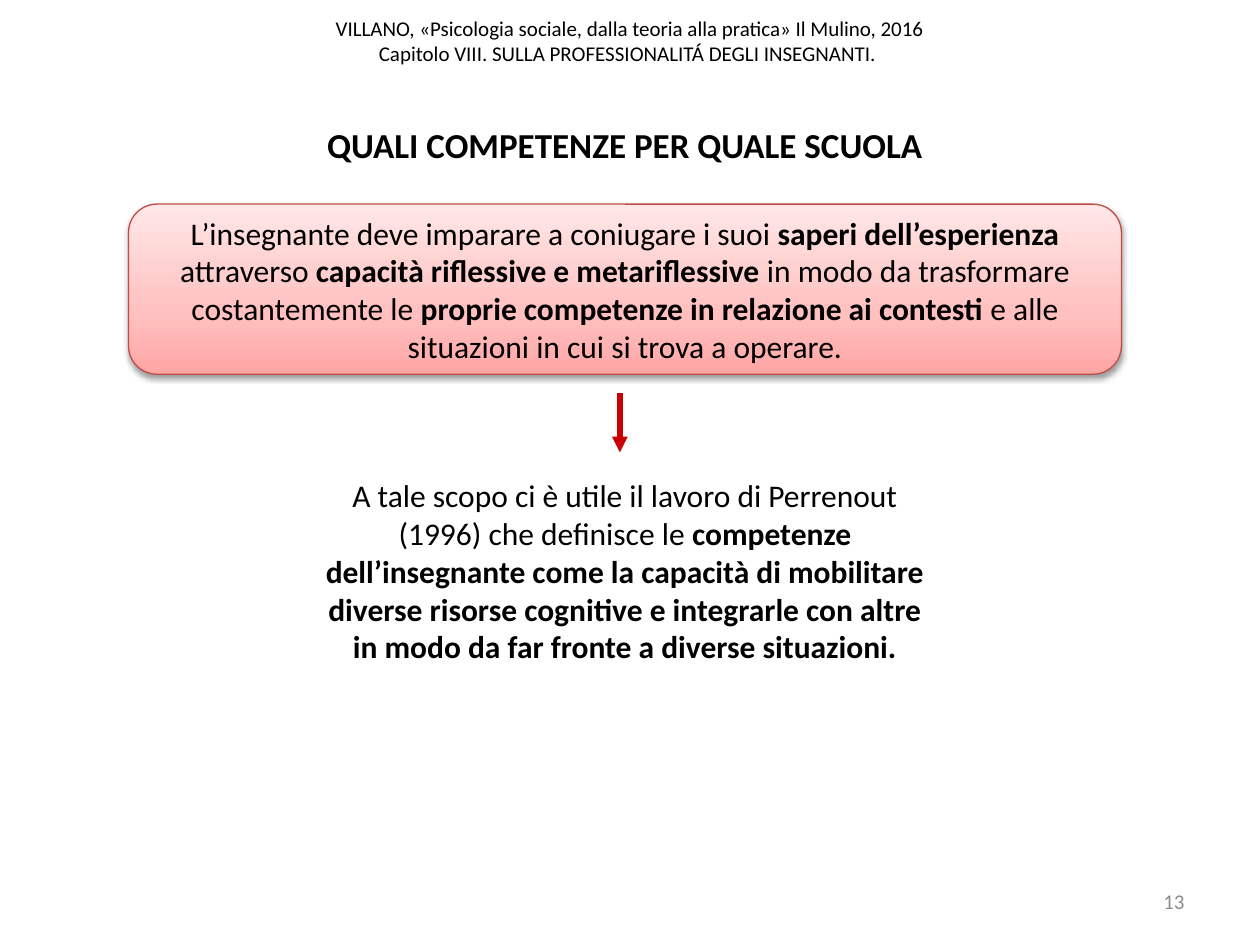
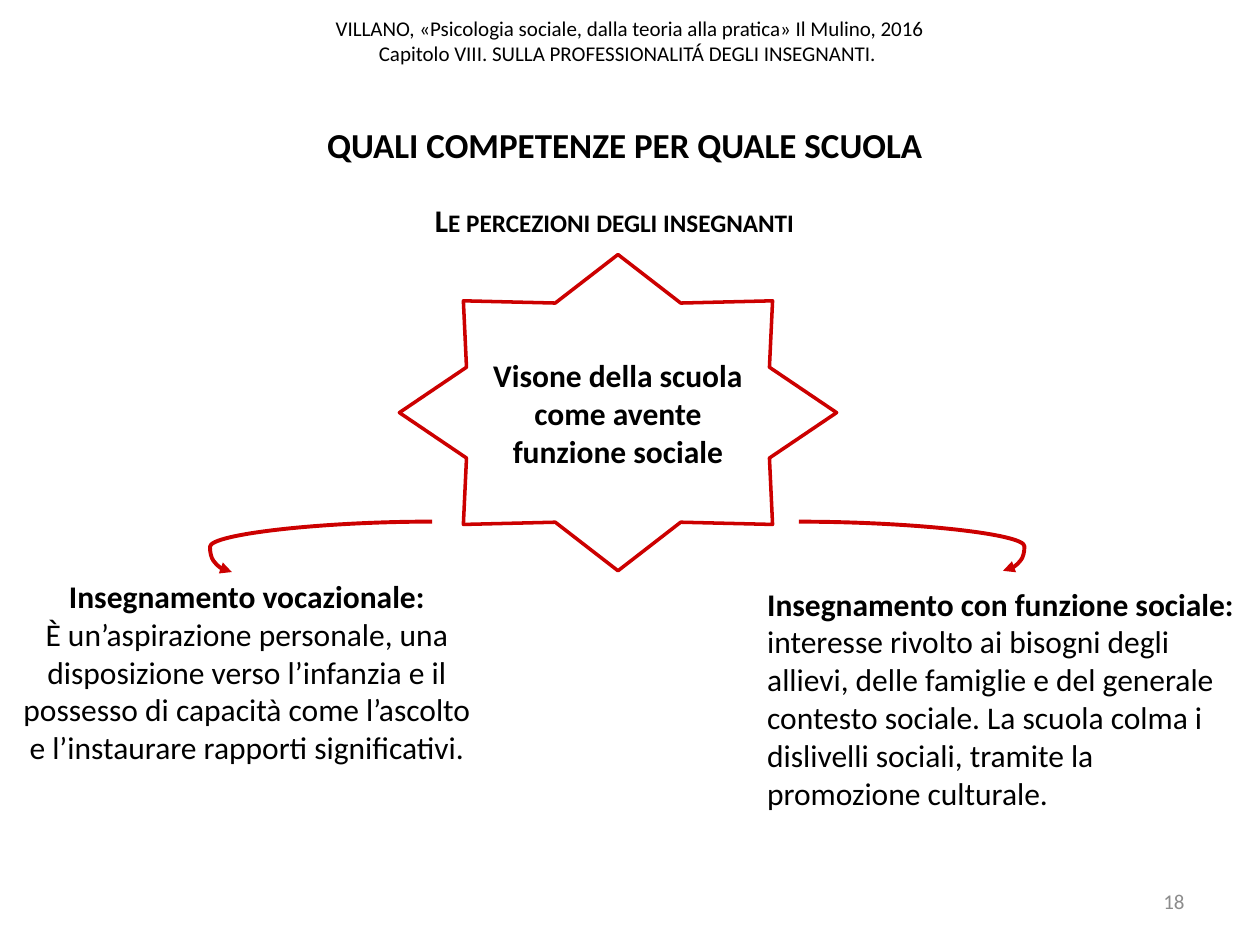
from copy import deepcopy
from lxml import etree
from pptx import Presentation
from pptx.dml.color import RGBColor
from pptx.enum.shapes import MSO_CONNECTOR, MSO_SHAPE
from pptx.enum.text import MSO_ANCHOR, MSO_AUTO_SIZE, PP_ALIGN
from pptx.oxml.ns import qn
from pptx.util import Inches, Pt

LEFT, CENTER, RIGHT = PP_ALIGN.LEFT, PP_ALIGN.CENTER, PP_ALIGN.RIGHT
TOP, MIDDLE = MSO_ANCHOR.TOP, MSO_ANCHOR.MIDDLE
LINE, CURVE = MSO_CONNECTOR.STRAIGHT, MSO_CONNECTOR.CURVE
FONT, BLACK, GREY, RED = "Calibri", "000000", "8C8C8C", "CC0000"


def write(shape, paras, size=18, align=CENTER, anchor=TOP, color=BLACK):
    """Fill a shape with paragraphs, each a list of (text, bold) runs."""
    frame = shape.text_frame
    frame.word_wrap = True
    frame.auto_size = MSO_AUTO_SIZE.NONE
    frame.vertical_anchor = anchor
    for i, runs in enumerate(paras):
        para = frame.add_paragraph() if i else frame.paragraphs[0]
        para.alignment = align
        for text, bold in runs:
            run = para.add_run()
            run.text = text
            run.font.name, run.font.size, run.font.bold = FONT, Pt(size), bold
            run.font.color.rgb = RGBColor.from_string(color)
    return shape


def arrow(slide, kind, ends, width, bend=None):
    """Draw a red arrow; bend is the curve's adjustment."""
    link = slide.shapes.add_connector(kind, *[Inches(v) for v in ends])
    link.line.color.rgb = RGBColor.from_string(RED)
    link.line.width = Pt(width)
    etree.SubElement(link.line._get_or_add_ln(), qn("a:tailEnd"), type="triangle")
    props = link.element.spPr
    etree.SubElement(props, qn("a:effectLst"))
    if bend:
        guides = props.find(qn("a:prstGeom")).get_or_add_avLst()
        etree.SubElement(guides, qn("a:gd"), name="adj1", fmla=f"val {round(bend * 100000)}")


deck = Presentation()
deck.slide_width, deck.slide_height = Inches(10), Inches(7.5)
layout = deck.slide_layouts[5]

# Title and page number
slides = []
for page in ("13", "18"):
    slide = deck.slides.add_slide(layout)
    title = slide.shapes.title
    title.left, title.top = Inches(1.69), Inches(0.93)
    title.width, title.height = Inches(6.54), Inches(0.44)
    write(title, [[("QUALI COMPETENZE PER QUALE SCUOLA", True)]], 20)
    box = slide.shapes.add_textbox(Inches(7.17), Inches(6.95), Inches(2.33), Inches(0.4))
    write(box, [[(page, False)]], 12, RIGHT, MIDDLE, GREY)
    slides.append(slide)
first, second = slides

# Running header, moved to the shared layout
head = first.shapes.add_textbox(Inches(0), Inches(-0.11), Inches(10), Inches(0.87))
write(head, [[("VILLANO, «Psicologia sociale, dalla teoria alla pratica» Il Mulino, 2016", False)],
             [("Capitolo VIII. SULLA PROFESSIONALITÁ DEGLI INSEGNANTI. ", False)]],
      12, CENTER, MIDDLE)
layout.shapes.element.append(head.element)

# Slide 1: card with gradient and soft shadow
card = first.shapes.add_shape(MSO_SHAPE.ROUNDED_RECTANGLE, Inches(1.02), Inches(1.62),
                              Inches(7.88), Inches(1.35))
card.line.color.rgb = RGBColor.from_string("BF4C48")
card.line.width = Pt(0.75)
card.fill.gradient()
card.fill.gradient_angle = 90
stops = card.element.spPr.find(qn("a:gradFill")).find(qn("a:gsLst"))
stops.append(deepcopy(stops[0]))
tints = [(0, "FFA6A5"), (0.35, "FFC0BF"), (1, "FFE7E7")]
for stop, (place, tint) in zip(card.fill.gradient_stops, tints):
    stop.position = place
    stop.color.rgb = RGBColor.from_string(tint)
card.shadow.inherit = False
shade = etree.SubElement(card.element.spPr.find(qn("a:effectLst")), qn("a:outerShdw"),
                         blurRad=str(Pt(3.1)), dist=str(Pt(1.6)), dir="5400000", rotWithShape="0")
black = etree.SubElement(shade, qn("a:srgbClr"), val=BLACK)
etree.SubElement(black, qn("a:alpha"), val="38000")
write(card, [[
    ("L’insegnante deve imparare a coniugare i suoi ", False),
    ("saperi dell’esperienza ", True),
    ("attraverso ", False),
    ("capacità riflessive e metariflessive ", True),
    ("in modo da trasformare costantemente le ", False),
    ("proprie competenze in relazione ai contesti ", True),
    ("e alle situazioni in cui si trova a operare.", False),
]], anchor=MIDDLE)

# Slide 1: arrow and definition
arrow(first, LINE, (4.92, 3.12, 4.92, 3.59), 3)
box = first.shapes.add_textbox(Inches(2.4), Inches(3.73), Inches(5.12), Inches(1.61))
write(box, [[
    ("A tale scopo ci è utile il lavoro di Perrenout (1996) che definisce le ", False),
    ("competenze dell’insegnante come la capacità di mobilitare diverse risorse cognitive "
     "e integrarle con altre in modo da far fronte a diverse situazioni.", True),
]])

# Slide 2: subtitle in small capitals
box = second.shapes.add_textbox(Inches(2.24), Inches(1.55), Inches(5.32), Inches(0.4))
write(box, [[("Le percezioni degli insegnanti ", True)]])
box.text_frame.paragraphs[0].runs[0].font._element.set("cap", "small")

# Slide 2: star
star = second.shapes.add_shape(MSO_SHAPE.STAR_8_POINT, Inches(3.17), Inches(2.02),
                               Inches(3.47), Inches(2.51))
star.shadow.inherit = False
star.fill.background()
star.line.color.rgb = RGBColor.from_string(RED)
star.line.width = Pt(2)
write(star, [[("Visone della scuola come avente funzione sociale", True)]], anchor=MIDDLE)

# Slide 2: the two views of teaching
views = [
    ((0.03, 4.53, 3.86, 1.61), CENTER, (3.43, 4.14, 1.84, 4.54), 1.109,
     "Insegnamento vocazionale:",
     "È un’aspirazione personale, una disposizione verso l’infanzia e il possesso di "
     "capacità come l’ascolto e l’instaurare rapporti significativi."),
    ((5.99, 4.59, 4.01, 1.92), LEFT, (6.34, 4.14, 7.96, 4.53), 1.105,
     "Insegnamento con funzione sociale:",
     "interesse rivolto ai bisogni degli allievi, delle famiglie e del generale contesto "
     "sociale. La scuola colma i dislivelli sociali, tramite la promozione culturale."),
]
for area, align, ends, bend, name, text in views:
    box = second.shapes.add_textbox(*[Inches(v) for v in area])
    write(box, [[(name, True)], [(text, False)]], align=align)
    arrow(second, CURVE, ends, 2.25, bend)

deck.save("out.pptx")
